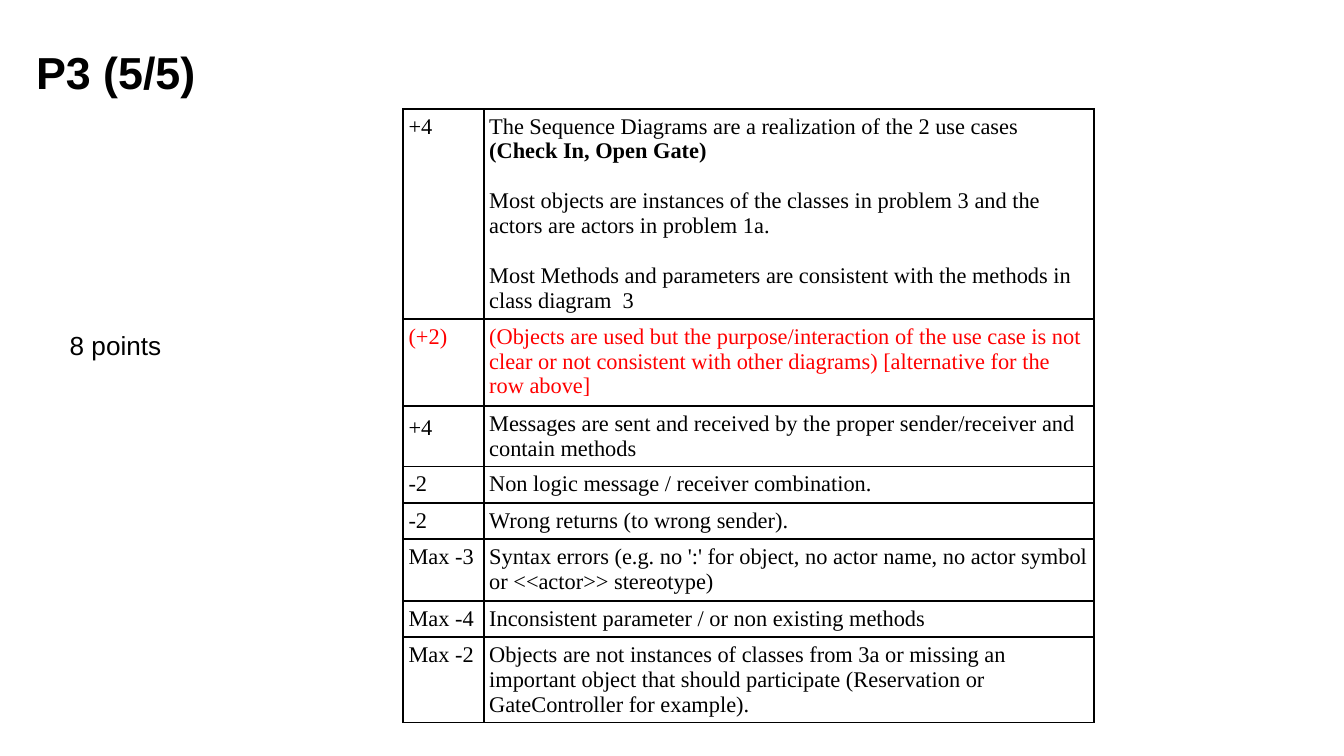
from dataclasses import dataclass

from lxml.etree import SubElement
from pptx import Presentation
from pptx.dml.color import RGBColor
from pptx.oxml.ns import qn
from pptx.util import Inches, Pt

LABELS = [
    {"text": "P3 (5/5)", "at": (0.17, 0.23, 1.76, 0.76), "size": "title", "bold": True},
    {"text": "8 points", "at": (0.42, 2.35, 1.51, 0.66), "size": "label", "bold": False},
]

RUBRIC = [
    ("+4", [
        [("The Sequence Diagrams are a realization of the 2 use cases ", False),
         ("(Check In, Open Gate)", True)],
        [("Most objects are instances of the classes in problem 3 and the actors are "
          "actors in problem 1a.", False)],
        [("Most Methods and parameters are consistent with the methods in "
          "class diagram  3", False)],
    ]),
    ("(+2)", "(Objects are used but the purpose/interaction of the use case is not clear "
             "or not consistent with other diagrams) [alternative for the row above]"),
    ("+4", "Messages are sent and received by the proper sender/receiver and contain methods"),
    ("-2", "Non logic message / receiver combination."),
    ("-2", "Wrong returns (to wrong sender)."),
    ("Max -3", "Syntax errors (e.g. no ':' for object, no actor name, no actor symbol "
               "or <<actor>> stereotype)"),
    ("Max -4", "Inconsistent parameter / or non existing methods"),
    ("Max -2", "Objects are not instances of classes from 3a or missing an important object "
               "that should participate (Reservation or GateController for example)."),
]
ALTERNATIVE_ROW = 1
LOOSE_ROW = 2
SLIDE_WIDTH = Inches(10)
SLIDE_HEIGHT = SLIDE_WIDTH * 9 // 16
TABLE_LEFT, TABLE_TOP = 3, 0.81
COLUMN_WIDTHS = [0.6, 4.54]
ROW_HEIGHTS = [1.56, 0.65, 0.45, 0.27, 0.27, 0.46, 0.27, 0.63]


@dataclass(frozen=True)
class Theme:
    ink: str = "000000"
    alternative: str = "FF0000"
    heading_font: str = "Arial"
    table_font: str = "Times New Roman"
    title: int = 24
    label: int = 14
    table: int = 12
    paragraph_gap: float = 13.4
    border: int = 1


THEME = Theme()


def set_attributes(target, values):
    for name, value in values.items():
        setattr(target, name, value)


def margins(inset):
    return {f"margin_{side}": Inches(inset) for side in ("left", "right", "top", "bottom")}


def add_span(para, text, font, size, bold=False, color=THEME.ink):
    span = para.add_run()
    span.text = text
    set_attributes(span.font, {"name": font, "size": Pt(size), "bold": bold})
    span.font.color.rgb = RGBColor.from_string(color)


def add_label(page, label):
    box = page.shapes.add_textbox(*map(Inches, label["at"]))
    set_attributes(box.text_frame, {"word_wrap": True, **margins(0.1)})
    add_span(box.text_frame.paragraphs[0], label["text"], THEME.heading_font,
             getattr(THEME, label["size"]), label["bold"])


def draw_borders(cell):
    properties = cell._tc.get_or_add_tcPr()
    for position, side in enumerate(("lnL", "lnR", "lnT", "lnB")):
        line = properties.makeelement(qn(f"a:{side}"), {"w": str(Pt(THEME.border))})
        fill = SubElement(line, qn("a:solidFill"))
        SubElement(fill, qn("a:srgbClr"), {"val": THEME.ink})
        properties.insert(position, line)


def fill_cell(cell, content, color):
    set_attributes(cell, margins(0.04))
    cell.fill.background()
    draw_borders(cell)
    paragraphs = [[(content, False)]] if isinstance(content, str) else content
    frame = cell.text_frame
    for index, spans in enumerate(paragraphs):
        para = frame.add_paragraph() if index else frame.paragraphs[0]
        if index:
            para.space_before = Pt(THEME.paragraph_gap)
        for text, bold in spans:
            add_span(para, text, THEME.table_font, THEME.table, bold, color)


def add_rubric(page):
    frame = page.shapes.add_table(
        len(RUBRIC), len(COLUMN_WIDTHS), Inches(TABLE_LEFT), Inches(TABLE_TOP),
        Inches(sum(COLUMN_WIDTHS)), Inches(sum(ROW_HEIGHTS)))
    table = frame.table
    set_attributes(table, {"first_row": False, "horz_banding": False})
    for column, width in zip(table.columns, COLUMN_WIDTHS):
        column.width = Inches(width)
    for row, height in zip(table.rows, ROW_HEIGHTS):
        row.height = Inches(height)
    for row_index, entry in enumerate(RUBRIC):
        color = THEME.alternative if row_index == ALTERNATIVE_ROW else THEME.ink
        for column_index, content in enumerate(entry):
            fill_cell(table.cell(row_index, column_index), content, color)
    loose_para = table.cell(LOOSE_ROW, 0).text_frame.paragraphs[0]
    set_attributes(loose_para, {"line_spacing": 1.15, "space_after": Pt(10)})


def main():
    deck = Presentation()
    set_attributes(deck, {"slide_width": SLIDE_WIDTH, "slide_height": SLIDE_HEIGHT})
    page = deck.slides.add_slide(deck.slide_layouts[6])
    add_rubric(page)
    for label in LABELS:
        add_label(page, label)
    deck.save("out.pptx")


if __name__ == "__main__":
    main()
